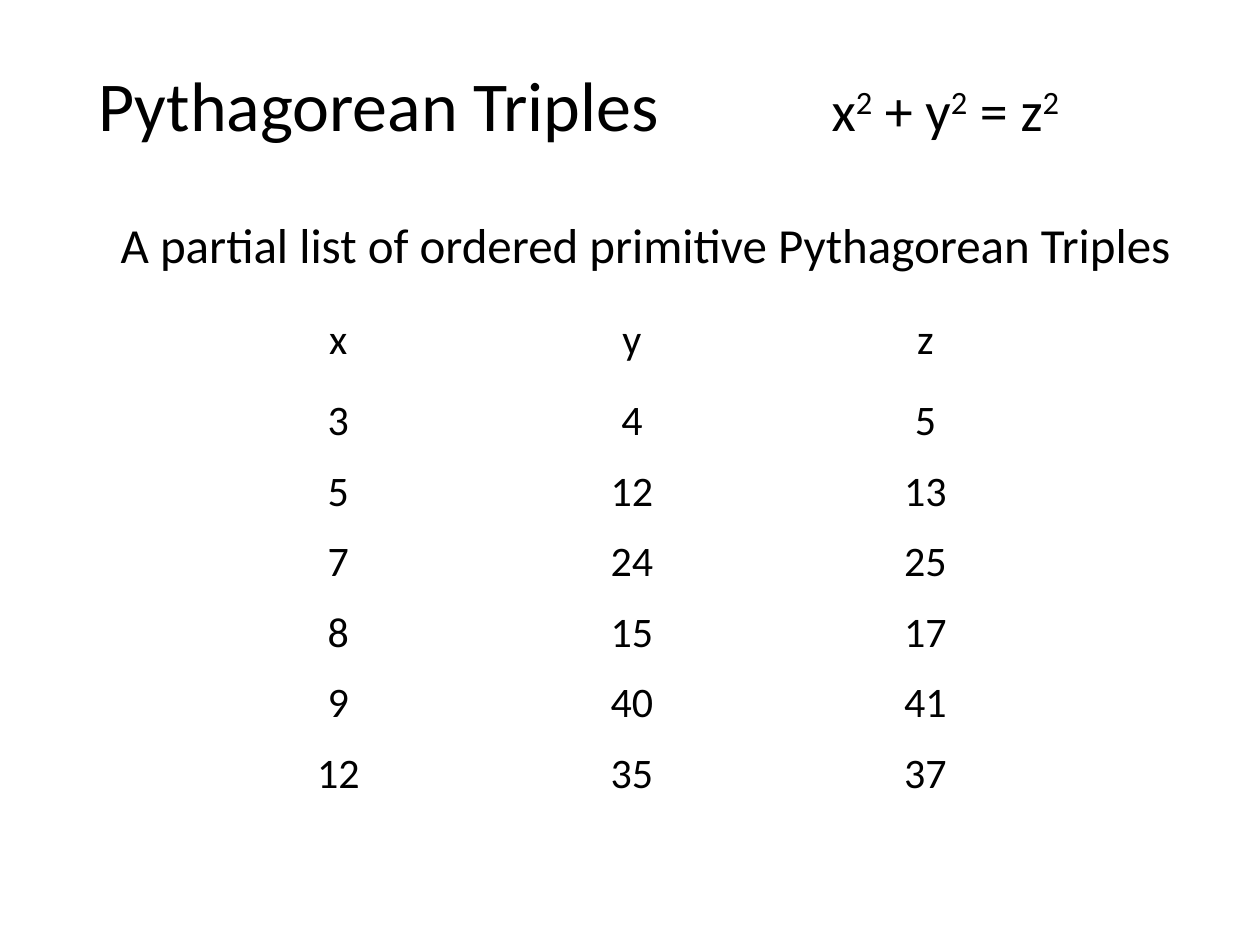
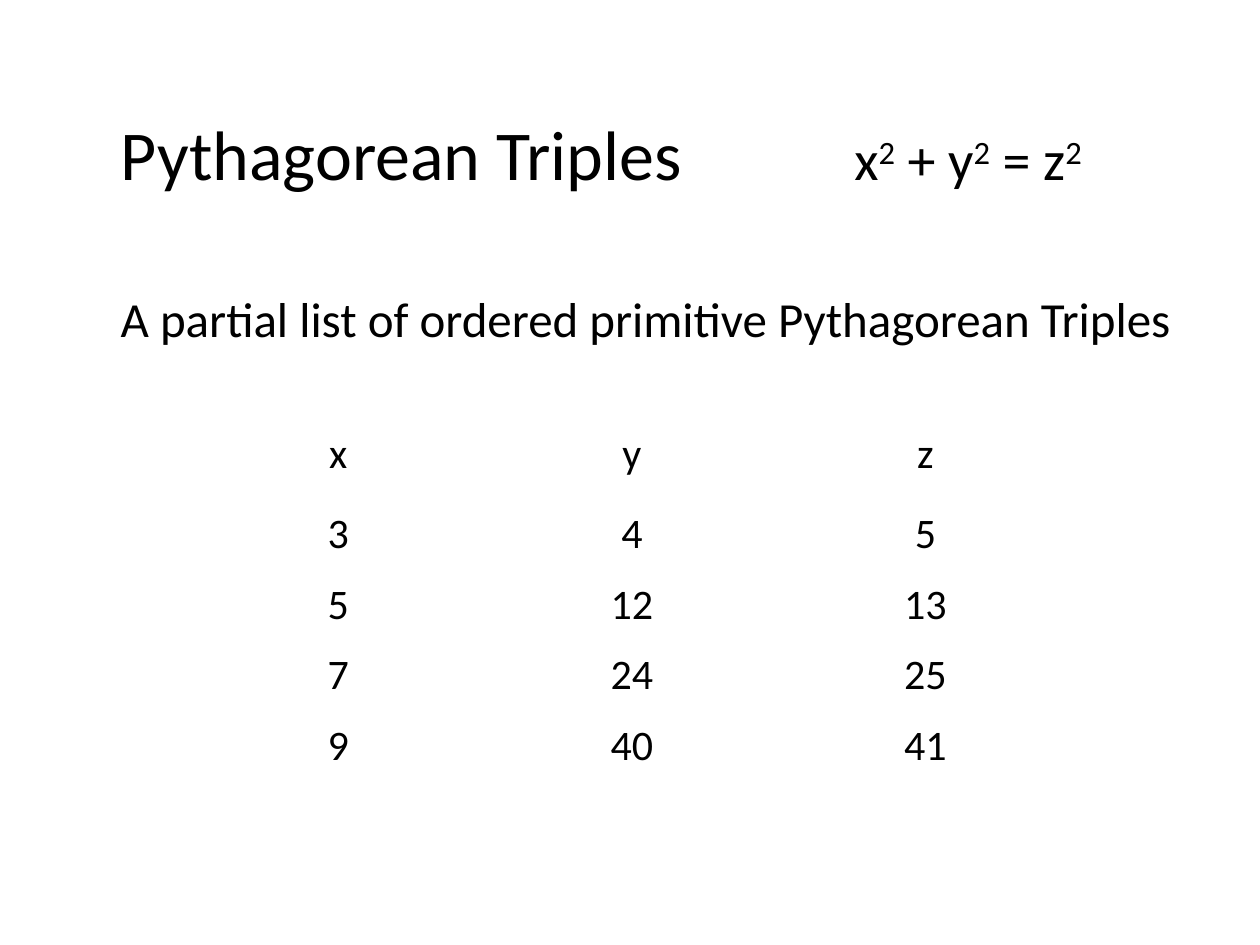
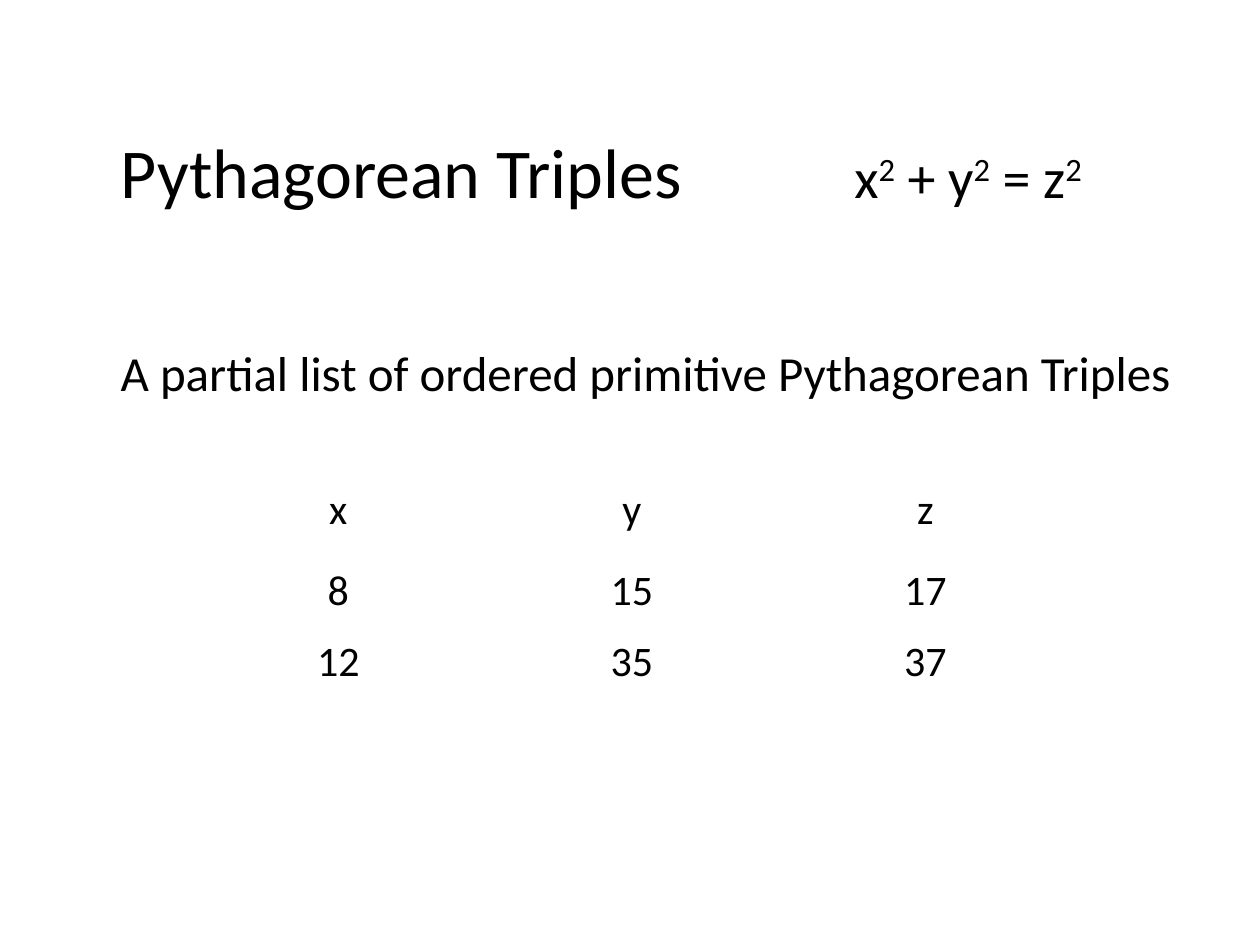
from pptx import Presentation
from pptx.dml.color import RGBColor
from pptx.enum.text import MSO_ANCHOR, MSO_AUTO_SIZE, PP_ALIGN
from pptx.oxml.ns import qn
from pptx.util import Inches, Pt
from lxml import etree

BLACK = RGBColor(0x00, 0x00, 0x00)
FONT = "Calibri"
LEFT, CENTER = PP_ALIGN.LEFT, PP_ALIGN.CENTER
TOP = MSO_ANCHOR.TOP
NO_AUTOFIT = MSO_AUTO_SIZE.NONE

TITLE_ONLY = 5
EQUATION_TAB = 5.82
TABLE_LEFT = 1.52
COLUMN_WIDTH = 2.33
HEADER_HEIGHT, ROW_HEIGHT = 0.64, 0.56
CAPTION_LEFT, CAPTION_WIDTH = 0.86, 8.67

TITLE = "Pythagorean Triples"
CAPTION = "A partial list of ordered primitive Pythagorean Triples"
EQUATION = [("x", False), ("2", True), (" + y", False), ("2", True),
            (" = z", False), ("2", True)]
HEADER = ("x", "y", "z")

# Title box, caption top and height, table top, triples
SLIDES = [
    ((0.68, 0.44, 8.61, 1.08), (1.65, 0.98), 2.45,
     [(3, 4, 5), (5, 12, 13), (7, 24, 25), (8, 15, 17), (9, 40, 41), (12, 35, 37)]),
    ((0.86, 0.83, 8.02, 0.77), (2.24, 0.57), 3.35,
     [(3, 4, 5), (5, 12, 13), (7, 24, 25), (9, 40, 41)]),
    ((0.86, 0.97, 8.67, 0.77), (2.67, 0.57), 3.8,
     [(8, 15, 17), (12, 35, 37)]),
]


def format_span(span, size):
    span.font.name = FONT
    span.font.size = Pt(size)
    span.font.color.rgb = BLACK


def add_span(para, text, size, superscript=False):
    span = para.add_run()
    span.text = text
    format_span(span, size)
    if superscript:
        span.font._element.set("baseline", "30000")


def set_tab_stop(para, position):
    tabs = etree.SubElement(para._p.get_or_add_pPr(), qn("a:tabLst"))
    etree.SubElement(tabs, qn("a:tab"), pos=str(Inches(position)), algn="l")


def set_title(page, area):
    """Place the title, with the equation at a tab stop on the same line."""
    box = page.shapes.title
    box.left, box.top, box.width, box.height = map(Inches, area)
    frame = box.text_frame
    frame.auto_size = NO_AUTOFIT
    frame.vertical_anchor = TOP
    frame.word_wrap = True
    para = frame.paragraphs[0]
    para.alignment = LEFT
    set_tab_stop(para, EQUATION_TAB)
    add_span(para, TITLE + "\t", 40)
    for text, superscript in EQUATION:
        add_span(para, text, 32, superscript)


def add_triples_table(page, top, triples):
    rows = [HEADER, *triples]
    height = HEADER_HEIGHT + ROW_HEIGHT * len(triples)
    table = page.shapes.add_table(
        len(rows), len(HEADER), Inches(TABLE_LEFT), Inches(top),
        Inches(COLUMN_WIDTH * len(HEADER)), Inches(height)).table
    table.first_row = False
    table.horz_banding = False
    for column in table.columns:
        column.width = Inches(COLUMN_WIDTH)
    for index, values in enumerate(rows):
        table.rows[index].height = Inches(ROW_HEIGHT if index else HEADER_HEIGHT)
        for cell, value in zip(table.rows[index].cells, values):
            cell.fill.background()
            cell.text_frame.text = str(value)
            para = cell.text_frame.paragraphs[0]
            para.alignment = CENTER
            format_span(para.runs[0], 24)


def add_caption(page, top, height):
    box = page.shapes.add_textbox(Inches(CAPTION_LEFT), Inches(top),
                                  Inches(CAPTION_WIDTH), Inches(height))
    frame = box.text_frame
    frame.word_wrap = True
    frame.text = CAPTION
    format_span(frame.paragraphs[0].runs[0], 28)


def main():
    deck = Presentation()
    deck.slide_width, deck.slide_height = Inches(10), Inches(7.5)
    for title_area, caption_area, table_top, triples in SLIDES:
        page = deck.slides.add_slide(deck.slide_layouts[TITLE_ONLY])
        set_title(page, title_area)
        add_triples_table(page, table_top, triples)
        add_caption(page, *caption_area)
    deck.save("out.pptx")


if __name__ == "__main__":
    main()
